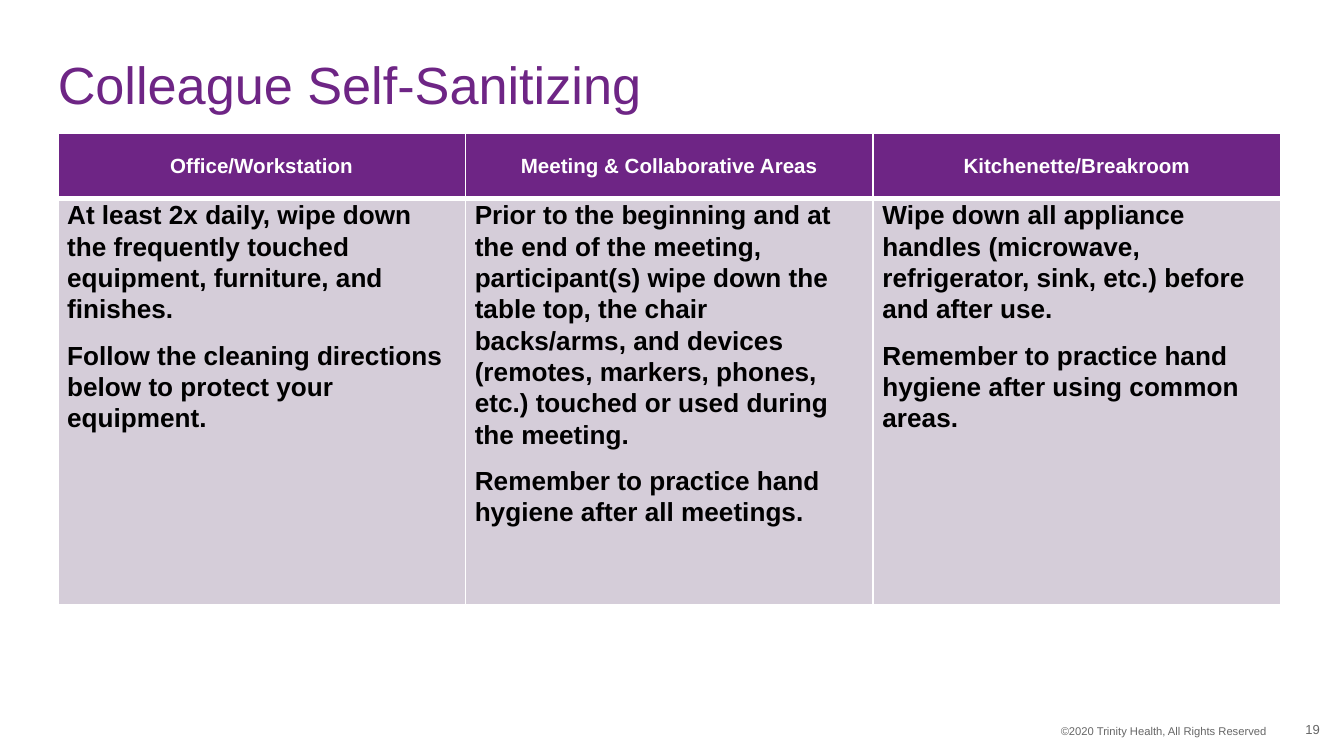
from lxml import etree
from pptx import Presentation
from pptx.dml.color import RGBColor
from pptx.enum.text import MSO_ANCHOR, PP_ALIGN
from pptx.oxml.ns import qn
from pptx.util import Inches, Pt

LEFT, CENTER, RIGHT = PP_ALIGN.LEFT, PP_ALIGN.CENTER, PP_ALIGN.RIGHT
TOP, MIDDLE = MSO_ANCHOR.TOP, MSO_ANCHOR.MIDDLE
TITLE_ONLY = 5

COLORS = {
    "purple": "6E2585",
    "lilac": "D5CDD9",
    "white": "FFFFFF",
    "black": "000000",
    "gray": "666666",
}

AREAS = {
    "Office/Workstation": [
        "At least 2x daily, wipe down the frequently touched equipment, "
        "furniture, and finishes.",
        "Follow the cleaning directions below to protect your equipment.",
    ],
    "Meeting & Collaborative Areas": [
        "Prior to the beginning and at the end of the meeting, participant(s) "
        "wipe down the table top, the chair backs/arms, and devices (remotes, "
        "markers, phones, etc.) touched or used during the meeting.",
        "Remember to practice hand hygiene after all meetings.",
    ],
    "Kitchenette/Breakroom": [
        "Wipe down all appliance handles (microwave, refrigerator, sink, etc.) "
        "before and after use.",
        "Remember to practice hand hygiene after using common areas.",
    ],
}


def write_text(frame, paragraphs, size, color, bold=False, align=LEFT,
               line_spacing=1.0, space_after=0):
    """Fill a text frame with one paragraph per string."""
    frame.word_wrap = True
    for index, text in enumerate(paragraphs):
        paragraph = frame.add_paragraph() if index else frame.paragraphs[0]
        paragraph.alignment = align
        paragraph.line_spacing = line_spacing
        paragraph.space_before = Pt(0)
        paragraph.space_after = Pt(space_after)
        run = paragraph.add_run()
        run.text = text
        run.font.name = "Arial"
        run.font.size = Pt(size)
        run.font.bold = bold
        run.font.color.rgb = RGBColor.from_string(COLORS[color])


def set_insets(frame, left, top, right, bottom):
    frame.margin_left, frame.margin_top = Inches(left), Inches(top)
    frame.margin_right, frame.margin_bottom = Inches(right), Inches(bottom)


def set_borders(cell, top=1, bottom=1):
    """Draw white cell borders; widths are in points."""
    properties = cell._tc.get_or_add_tcPr()
    widths = {"a:lnL": 1, "a:lnR": 1, "a:lnT": top, "a:lnB": bottom}
    for position, (tag, width) in enumerate(widths.items()):
        line = etree.Element(qn(tag), w=str(Pt(width)))
        fill = etree.SubElement(line, qn("a:solidFill"))
        etree.SubElement(fill, qn("a:srgbClr"), val=COLORS["white"])
        properties.insert(position, line)


def format_cell(cell, fill, anchor, **borders):
    set_insets(cell, 0.07, 0, 0.07, 0)
    cell.vertical_anchor = anchor
    cell.fill.solid()
    cell.fill.fore_color.rgb = RGBColor.from_string(COLORS[fill])
    set_borders(cell, **borders)


def add_title(slide, text):
    title = slide.shapes.title
    title.left, title.top = Inches(0.43), Inches(0.38)
    title.width, title.height = Inches(9), Inches(0.55)
    set_insets(title.text_frame, 0, 0, 0, 0)
    title.text_frame.vertical_anchor = MIDDLE
    write_text(title.text_frame, [text], 28, "purple", line_spacing=0.9)


def add_area_table(slide):
    table = slide.shapes.add_table(
        2, len(AREAS), Inches(0.43), Inches(0.99), Inches(9.1), Inches(3.51)
    ).table
    table.rows[0].height, table.rows[1].height = Inches(0.49), Inches(3.02)
    for column, (area, instructions) in enumerate(AREAS.items()):
        header, body = table.cell(0, column), table.cell(1, column)
        format_cell(header, "purple", MIDDLE, bottom=3)
        write_text(header.text_frame, [area], 11, "white", bold=True,
                   align=CENTER, line_spacing=1.07)
        format_cell(body, "lilac", TOP, top=3)
        write_text(body.text_frame, instructions, 14, "black", bold=True,
                   line_spacing=1.07, space_after=8)


def add_footer_text(slide, text, left, top, width, height, size, anchor, insets):
    box = slide.shapes.add_textbox(
        Inches(left), Inches(top), Inches(width), Inches(height))
    set_insets(box.text_frame, *insets)
    box.text_frame.vertical_anchor = anchor
    write_text(box.text_frame, [text], size, "gray", align=RIGHT)


def main():
    # Widescreen 16:9 slide
    presentation = Presentation()
    presentation.slide_width = Inches(10)
    presentation.slide_height = Inches(10 * 9 / 16)
    slide = presentation.slides.add_slide(presentation.slide_layouts[TITLE_ONLY])

    # Heading and instructions by area
    add_title(slide, "Colleague Self-Sanitizing")
    add_area_table(slide)

    # Copyright line and page number
    add_footer_text(slide, "©2020 Trinity Health, All Rights Reserved",
                    5.33, 5.34, 4.19, 0.2, 6, TOP, (0.1, 0.05, 0.1, 0.05))
    add_footer_text(slide, "19", 9.38, 5.28, 0.44, 0.3, 7, MIDDLE,
                    (0.1, 0.05, 0, 0.05))

    presentation.save("out.pptx")


if __name__ == "__main__":
    main()
